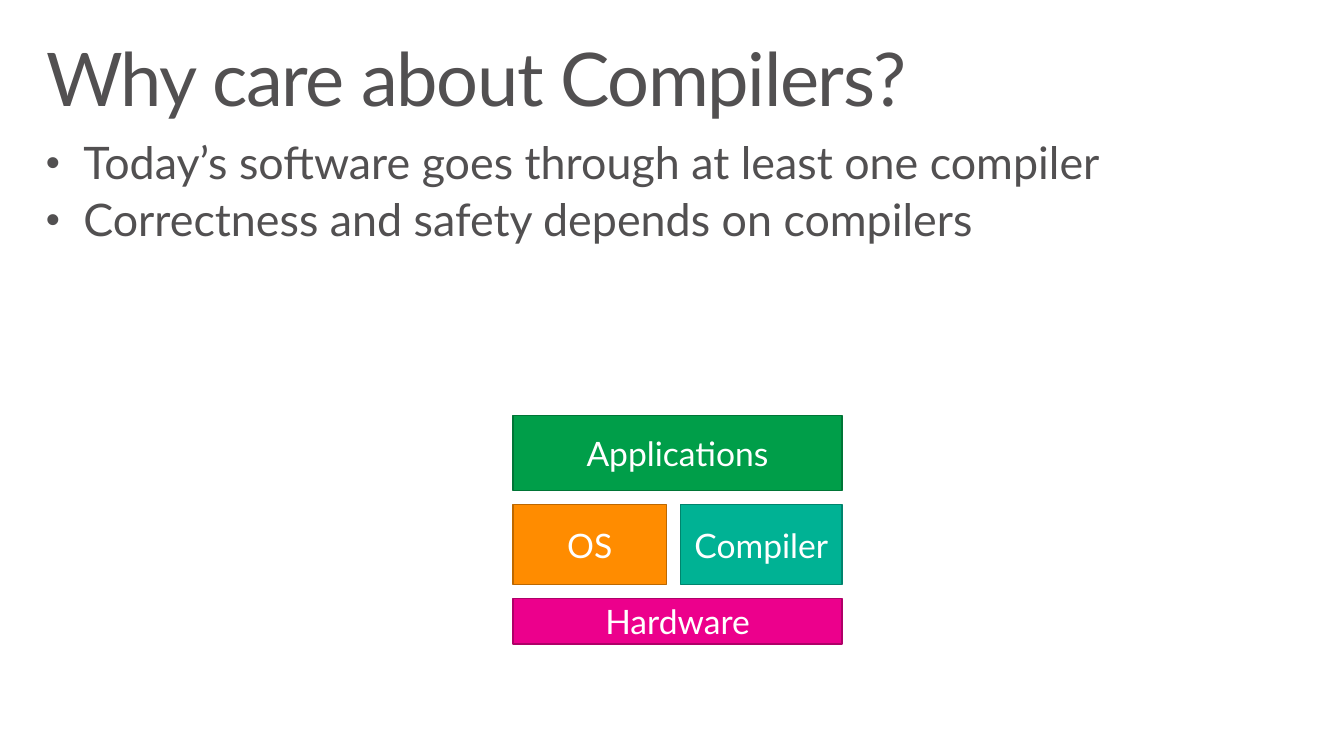
from pptx import Presentation
from pptx.dml.color import RGBColor
from pptx.enum.shapes import MSO_SHAPE
from pptx.enum.text import MSO_ANCHOR, MSO_AUTO_SIZE, PP_ALIGN
from pptx.oxml.ns import qn
from pptx.util import Cm, Pt

RECT = MSO_SHAPE.RECTANGLE
TOP, MIDDLE = MSO_ANCHOR.TOP, MSO_ANCHOR.MIDDLE
LEFT, CENTER = PP_ALIGN.LEFT, PP_ALIGN.CENTER
NO_FIT = MSO_AUTO_SIZE.NONE

FONT = "Lato"
TITLE_ONLY = 5
GRAY = RGBColor(0x52, 0x50, 0x51)
WHITE = RGBColor(0xFF, 0xFF, 0xFF)
GREEN, DARK_GREEN = RGBColor(0x00, 0x9E, 0x49), RGBColor(0x00, 0x75, 0x36)
ORANGE, DARK_ORANGE = RGBColor(0xFF, 0x8C, 0x00), RGBColor(0xBD, 0x68, 0x00)
TEAL, DARK_TEAL = RGBColor(0x00, 0xB2, 0x94), RGBColor(0x00, 0x84, 0x6D)
PINK, DARK_PINK = RGBColor(0xEC, 0x00, 0x8C), RGBColor(0xAF, 0x00, 0x68)

BULLETS = [
    "Today’s software goes through at least one compiler",
    "Correctness and safety depends on compilers",
]
# Each layer: height in cm, then its blocks as (text, share of width, fill, line)
LAYERS = [
    (1.88, [("Applications", 1, GREEN, DARK_GREEN)]),
    (2.01, [("OS", 0.487, ORANGE, DARK_ORANGE),
            ("Compiler", 0.513, TEAL, DARK_TEAL)]),
    (1.14, [("Hardware", 1, PINK, DARK_PINK)]),
]
GAP = 0.36


def format_paragraph(p, size, color, align):
    p.font.name = FONT
    p.font.size = Pt(size)
    p.font.color.rgb = color
    p.alignment = align


def set_frame(tf):
    tf.word_wrap = True
    tf.auto_size = NO_FIT
    tf.vertical_anchor = TOP
    tf.margin_left = tf.margin_right = Cm(0.41)
    tf.margin_top = tf.margin_bottom = Cm(0.25)


def add_title(s, text, left, top, width, height):
    title = s.shapes.title
    title.left, title.top = Cm(left), Cm(top)
    title.width, title.height = Cm(width), Cm(height)
    tf = title.text_frame
    set_frame(tf)
    p = tf.paragraphs[0]
    r = p.add_run()
    r.text = text
    format_paragraph(p, 52.9, GRAY, LEFT)
    p.line_spacing = 0.9
    r.font.size = Pt(52.9)
    r.font._element.set("spc", "-100")


def add_bullets(s, items, left, top, width, height):
    tf = s.shapes.add_textbox(Cm(left), Cm(top), Cm(width), Cm(height)).text_frame
    set_frame(tf)
    for i, item in enumerate(items):
        p = tf.add_paragraph() if i else tf.paragraphs[0]
        p.text = item
        format_paragraph(p, 32, GRAY, LEFT)
        p.line_spacing = 0.9
        p.space_before = Pt(6.4)
        pPr = p._p.get_or_add_pPr()
        pPr.set("marL", str(Cm(0.94)))
        pPr.set("indent", str(-Cm(0.94)))
        for tag, name, value in (("a:buSzPct", "val", "90000"),
                                 ("a:buFont", "typeface", "Arial"),
                                 ("a:buChar", "char", "•")):
            bullet = pPr.makeelement(qn(tag), {name: value})
            pPr.insert_element_before(bullet, "a:tabLst", "a:defRPr", "a:extLst")


def add_block(s, text, fill, line, left, top, width, height):
    sp = s.shapes.add_shape(RECT, Cm(left), Cm(top), Cm(width), Cm(height))
    sp.shadow.inherit = False
    sp.fill.solid()
    sp.fill.fore_color.rgb = fill
    sp.line.color.rgb = line
    sp.line.width = Pt(0.85)
    tf = sp.text_frame
    tf.word_wrap = True
    tf.vertical_anchor = MIDDLE
    p = tf.paragraphs[0]
    p.text = text
    format_paragraph(p, 24, WHITE, CENTER)


def add_stack(s, layers, left, top, width):
    """Stack the layers downwards, sharing each layer's width among its blocks."""
    for height, blocks in layers:
        usable = width - GAP * (len(blocks) - 1)
        x = left
        for text, share, fill, line in blocks:
            add_block(s, text, fill, line, x, top, usable * share, height)
            x += usable * share + GAP
        top += height + GAP


def main():
    prs = Presentation()
    prs.slide_width, prs.slide_height = Cm(33.87), Cm(19.05)
    s = prs.slides.add_slide(prs.slide_layouts[TITLE_ONLY])
    add_title(s, "Why care about Compilers?", 0.75, 0.81, 32.38, 2.49)
    add_bullets(s, BULLETS, 0.75, 3.3, 32.37, 5.82)
    add_stack(s, LAYERS, 12.93, 10.48, 8.29)
    prs.save("out.pptx")


if __name__ == "__main__":
    main()
